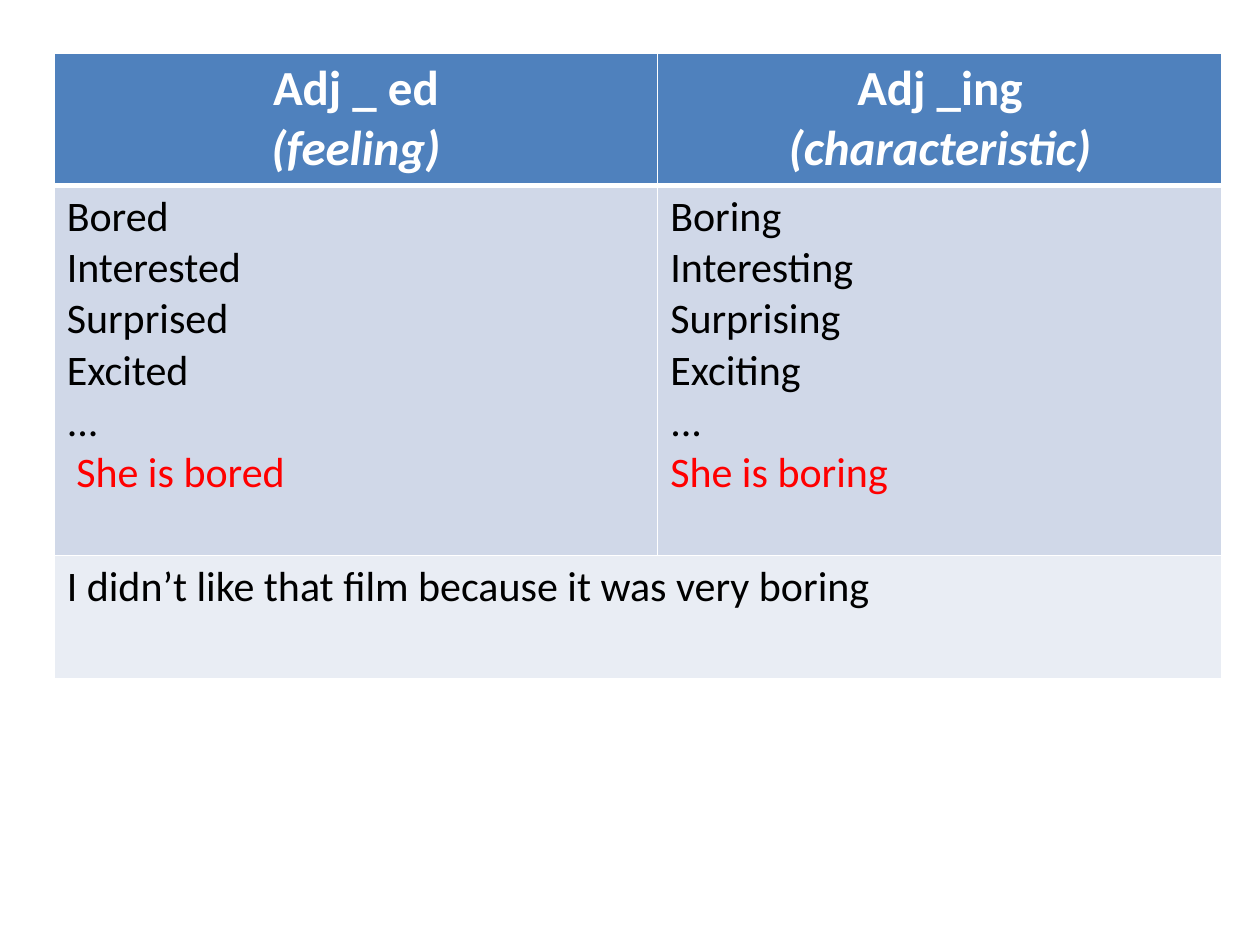
from lxml import etree
from pptx import Presentation
from pptx.dml.color import RGBColor
from pptx.enum.text import PP_ALIGN
from pptx.oxml.ns import qn
from pptx.util import Inches, Pt

CENTER, LEFT = PP_ALIGN.CENTER, PP_ALIGN.LEFT
WHITE, BLACK, RED = "FFFFFF", "000000", "FF0000"
HEADER_FILL, WORDS_FILL, EXAMPLE_FILL = "4F81BD", "D0D8E8", "E9EDF4"


def rgb(color):
    return RGBColor.from_string(color)


class SlideBuilder:
    font = "Calibri"

    def __init__(self, slide):
        self.s = slide

    def table(self, left, top, widths, heights):
        frame = self.s.shapes.add_table(
            len(heights), len(widths), Inches(left), Inches(top),
            Inches(sum(widths)), Inches(sum(heights)))
        table = frame.table
        for column, width in zip(table.columns, widths):
            column.width = Inches(width)
        for row, height in zip(table.rows, heights):
            row.height = Inches(height)
        return table

    def borders(self, cell, bottom=1, top=1):
        tc_pr = cell._tc.get_or_add_tcPr()
        for side, width in (("L", 1), ("R", 1), ("T", top), ("B", bottom)):
            ln = etree.SubElement(tc_pr, qn(f"a:ln{side}"), w=str(Pt(width)))
            fill = etree.SubElement(ln, qn("a:solidFill"))
            etree.SubElement(fill, qn("a:srgbClr"), val=WHITE)

    def fill(self, cell, color):
        cell.fill.solid()
        cell.fill.fore_color.rgb = rgb(color)

    def text(self, cell, lines, size, align=LEFT, bold=False):
        """Each line is (text, color, italic)."""
        tf = cell.text_frame
        for i, (text, color, italic) in enumerate(lines):
            p = tf.paragraphs[0] if i == 0 else tf.add_paragraph()
            p.text = text
            p.alignment = align
            font = p.font
            font.name, font.size = self.font, Pt(size)
            font.bold, font.italic = bold, italic
            font.color.rgb = rgb(color)


def main():
    prs = Presentation()
    prs.slide_width, prs.slide_height = Inches(10), Inches(7.5)
    builder = SlideBuilder(prs.slides.add_slide(prs.slide_layouts[6]))
    table = builder.table(0.43, 0.42, [4.79, 4.48], [1.05, 2.94, 0.98])

    columns = [
        ("Adj _ ed", "(feeling)",
         ["Bored", "Interested", "Surprised", "Excited", "..."],
         " She is bored"),
        ("Adj _ing", "(characteristic)",
         ["Boring", "Interesting", "Surprising", "Exciting", "..."],
         "She is boring"),
    ]

    # Header and word lists
    for c, (ending, meaning, words, example) in enumerate(columns):
        header, body = table.cell(0, c), table.cell(1, c)
        builder.borders(header, bottom=3)
        builder.fill(header, HEADER_FILL)
        builder.text(header, [(ending, WHITE, False), (meaning, WHITE, True)],
                     28, CENTER, bold=True)
        builder.borders(body, top=3)
        builder.fill(body, WORDS_FILL)
        lines = [(word, BLACK, False) for word in words]
        builder.text(body, lines + [(example, RED, False)], 24)

    # Example sentence across both columns
    sentence = table.cell(2, 0)
    sentence.merge(table.cell(2, 1))
    builder.borders(sentence)
    builder.fill(sentence, EXAMPLE_FILL)
    builder.text(sentence, [
        ("I didn’t like that film because it was very boring", BLACK, False)],
        24)

    prs.save("out.pptx")


if __name__ == "__main__":
    main()
